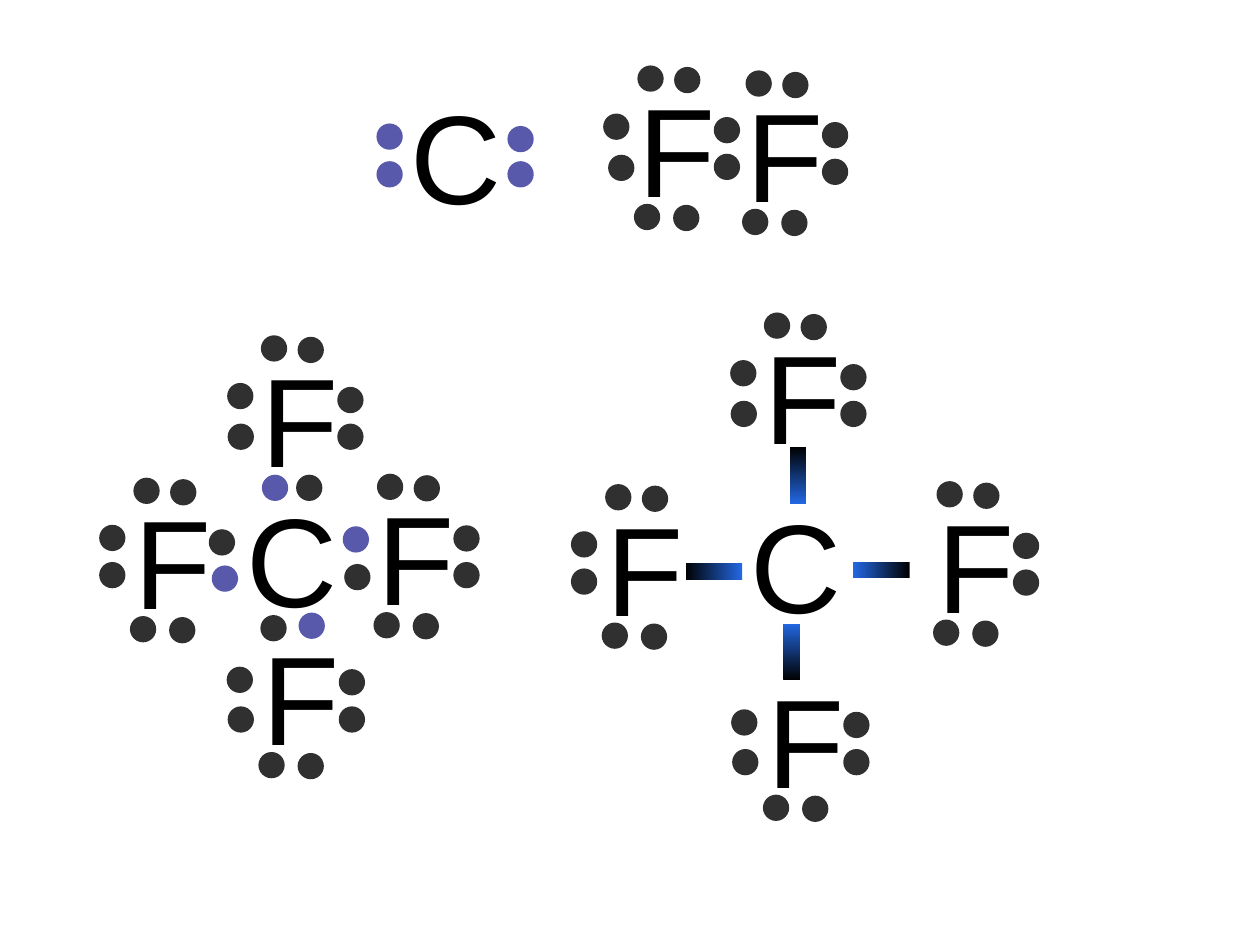
import pptx
import pptx.dml.color
import pptx.enum.shapes
import pptx.enum.text
import pptx.oxml
import pptx.util
from pptx.oxml.ns import qn

Cm = pptx.util.Cm
RGBColor = pptx.dml.color.RGBColor
SHAPE = pptx.enum.shapes.MSO_SHAPE

BLACK = RGBColor(0x00, 0x00, 0x00)
VIOLET = RGBColor(0x33, 0x33, 0x99)
BLUE = RGBColor(0x23, 0x68, 0xE3)

DOT = 0.53
LETTER_WIDTH, LETTER_HEIGHT = 2.36, 3.3
BOND_LENGTH, BOND_WIDTH = 1.14, 0.33

PAIRS = {
    "top": ((0.23, 0), (0.97, 0.03)),
    "bottom": ((0.16, 2.79), (0.95, 2.81)),
    "left": ((-0.45, 0.96), (-0.44, 1.78)),
    "right": ((1.77, 1.04), (1.77, 1.78)),
    "tilted left": ((-0.46, 0.97), (-0.36, 1.8)),
    "close left": ((-0.46, 0.95), (-0.46, 1.7)),
    "low left": ((-0.48, 1.07), (-0.46, 1.87)),
    "low right": ((1.78, 1.12), (1.78, 1.87)),
    "bond below": ((0.25, 2.81), (0.94, 2.81)),
    "bond above": ((0.2, 0.03), (0.97, -0.02)),
    "bond left": ((-0.46, 1.06), (-0.43, 1.82)),
    "bond right": ((1.75, 1.04), (1.81, 1.77)),
    "carbon left": ((-0.43, 1.04), (-0.43, 1.8)),
    "carbon right": ((2.21, 1.09), (2.21, 1.8)),
}


def add_shape(slide, kind, left, top, width, height):
    """Add a borderless, shadowless shape measured in centimetres."""
    sp = slide.shapes.add_shape(kind, Cm(left), Cm(top), Cm(width), Cm(height))
    sp.shadow.inherit = False
    sp.line.fill.background()
    return sp


def add_electron(slide, left, top, color):
    """Draw one slightly transparent electron dot."""
    sp = add_shape(slide, SHAPE.OVAL, left, top, DOT, DOT)
    sp.fill.solid()
    sp.fill.fore_color.rgb = color
    clr = sp.fill._xPr.find(qn("a:solidFill"))[0]
    pptx.oxml.xmlchemy.OxmlElement("a:alpha")
    alpha = clr.makeelement(qn("a:alpha"), {"val": "81000"})
    clr.append(alpha)


def add_atom(slide, symbol, left, top, pairs, violet=()):
    """Write an element symbol and its electron pairs; violet holds (pair, index)."""
    sp = slide.shapes.add_textbox(Cm(left), Cm(top), Cm(LETTER_WIDTH), Cm(LETTER_HEIGHT))
    tf = sp.text_frame
    tf.word_wrap = True
    tf.auto_size = pptx.enum.text.MSO_AUTO_SIZE.SHAPE_TO_FIT_TEXT
    tf.text = symbol
    p = tf.paragraphs[0]
    p.space_before = pptx.util.Pt(7.2)
    r = p.runs[0]
    r.font.name = "Arial"
    r.font.size = pptx.util.Pt(72)
    r.font.color.rgb = BLACK
    for pair in pairs:
        for i, (dx, dy) in enumerate(PAIRS[pair]):
            color = VIOLET if (pair, i) in violet else BLACK
            add_electron(slide, left + dx, top + dy, color)


def add_bond(slide, center_x, center_y, angle):
    """Draw a bond fading from black to blue along the given angle."""
    width, height = BOND_LENGTH, BOND_WIDTH
    if angle in (90, 270):
        width, height = height, width
    sp = add_shape(slide, SHAPE.RECTANGLE, center_x - width / 2,
                   center_y - height / 2, width, height)
    sp.fill.gradient()
    sp.fill.gradient_angle = angle
    for stop, color, position in zip(sp.fill.gradient_stops, (BLACK, BLUE), (0, 1)):
        stop.color.rgb = color
        stop.position = position


def add_reactants(slide, left, top):
    """Draw the carbon atom and the fluorine molecule."""
    sides = ("carbon left", "carbon right")
    add_atom(slide, "C", left + 0.43, top + 0.13, sides,
             [(side, i) for side in sides for i in range(2)])
    add_atom(slide, "F", left + 5.03, top, ("top", "bottom", "tilted left", "right"))
    add_atom(slide, "F", left + 7.21, top + 0.1, ("top", "bottom", "right"))


def add_dot_structure(slide, left, top):
    """Draw the molecule with its shared pairs as dots."""
    add_atom(slide, "C", left + 2.71, top + 2.82, ())
    fluorines = (
        (3.02, 0, ("top", "left", "right", "bond below"), ("bond below", 0)),
        (0.45, 2.87, ("top", "bottom", "close left", "bond right"), ("bond right", 1)),
        (5.36, 2.79, ("top", "bottom", "right", "bond left"), ("bond left", 0)),
        (3.04, 5.61, ("bottom", "low left", "low right", "bond above"), ("bond above", 1)),
    )
    for dx, dy, pairs, carbon_electron in fluorines:
        add_atom(slide, "F", left + dx, top + dy, pairs, (carbon_electron,))


def add_line_structure(slide, left, top):
    """Draw the molecule with its shared pairs as bonds."""
    add_atom(slide, "C", left + 3.38, top + 3.4, ())
    fluorines = (
        (3.66, 0, ("top", "left", "right")),
        (0.46, 3.46, ("top", "bottom", "close left")),
        (7.14, 3.4, ("top", "bottom", "right")),
        (3.71, 6.93, ("bottom", "low left", "low right")),
    )
    for dx, dy, pairs in fluorines:
        add_atom(slide, "F", left + dx, top + dy, pairs)
    bonds = ((4.58, 3.29, 270), (2.88, 5.22, 0), (6.26, 5.19, 180), (4.45, 6.84, 90))
    for dx, dy, angle in bonds:
        add_bond(slide, left + dx, top + dy, angle)


def main():
    """Build and save the slide."""
    prs = pptx.Presentation()
    prs.slide_width, prs.slide_height = Cm(25.4), Cm(19.05)
    slide = prs.slides.add_slide(prs.slide_layouts[6])
    add_reactants(slide, 7.59, 1.32)
    add_dot_structure(slide, 2.01, 6.76)
    add_line_structure(slide, 11.51, 6.3)
    prs.save("out.pptx")


if __name__ == "__main__":
    main()
